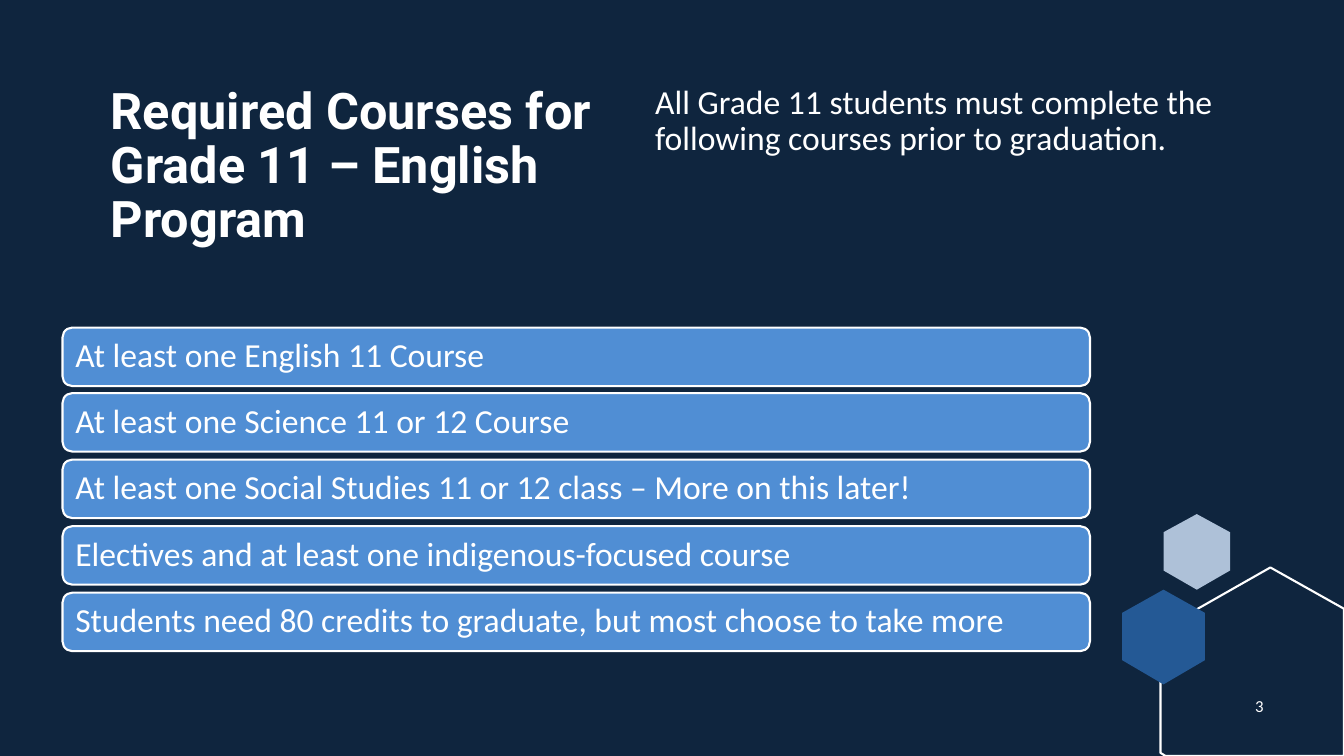
from dataclasses import dataclass

from pptx import Presentation
from pptx.dml.color import RGBColor
from pptx.enum.shapes import MSO_SHAPE
from pptx.enum.text import MSO_ANCHOR, PP_ALIGN
from pptx.util import Emu, Pt

ROUNDED = MSO_SHAPE.ROUNDED_RECTANGLE
TOP, MIDDLE = MSO_ANCHOR.TOP, MSO_ANCHOR.MIDDLE
LEFT, CENTER = PP_ALIGN.LEFT, PP_ALIGN.CENTER
EMU_PER_PX = 9144
SLIDE_WIDTH, SLIDE_HEIGHT = 1333, 750

COURSES = [
    "At least one English 11 Course",
    "At least one Science 11 or 12 Course",
    "At least one Social Studies 11 or 12 class – More on this later!",
    "Electives and at least one indigenous-focused course",
    "Students need 80 credits to graduate, but most choose to take more",
]
FIRST_BAR_TOP, LAST_BAR_TOP = 325, 588


@dataclass(frozen=True)
class Theme:
    background: str = "0F253E"
    white: str = "FFFFFF"
    bar: str = "508ED4"
    pale_hexagon: str = "AEC1D8"
    deep_hexagon: str = "245995"
    heading_font: str = "Roboto"
    body_font: str = "Calibri"
    title_size: int = 36
    body_size: int = 24
    number_size: int = 12
    line_width: float = 1.5
    line_spacing: float = 0.9


def px(length):
    return Emu(length * EMU_PER_PX)


def write_text(frame, text, *, font, size, color, bold=False,
               align=LEFT, anchor=TOP, line_spacing=1.0):
    frame.word_wrap = True
    frame.vertical_anchor = anchor
    paragraph = frame.paragraphs[0]
    paragraph.alignment = align
    paragraph.line_spacing = line_spacing
    run = paragraph.add_run()
    run.text = text
    run.font.name = font
    run.font.size = Pt(size)
    run.font.bold = bold
    run.font.color.rgb = RGBColor.from_string(color)


class SlideBuilder:
    def __init__(self, presentation, theme):
        self.theme = theme
        self.slide = presentation.slides.add_slide(presentation.slide_layouts[6])
        fill = self.slide.background.fill
        fill.solid()
        fill.fore_color.rgb = RGBColor.from_string(theme.background)

    def paint(self, shape, fill=None, line=None):
        shape.shadow.inherit = False
        if fill:
            shape.fill.solid()
            shape.fill.fore_color.rgb = RGBColor.from_string(fill)
        else:
            shape.fill.background()
        if line:
            shape.line.color.rgb = RGBColor.from_string(line)
            shape.line.width = Pt(self.theme.line_width)
        else:
            shape.line.fill.background()

    def polygon(self, points, fill=None, line=None):
        builder = self.slide.shapes.build_freeform(*points[0], scale=EMU_PER_PX)
        builder.add_line_segments(points[1:], close=True)
        self.paint(builder.convert_to_shape(), fill, line)

    def hexagon(self, left, top, width, height, fill):
        center, right = left + width // 2, left + width
        upper, lower = top + height // 4, top + height * 3 // 4
        self.polygon([(center, top), (right, upper), (right, lower),
                      (center, top + height), (left, lower), (left, upper)], fill)

    def text(self, left, top, width, height, text, **text_format):
        box = self.slide.shapes.add_textbox(px(left), px(top), px(width), px(height))
        style = {"font": self.theme.body_font, "size": self.theme.body_size,
                 "color": self.theme.white, **text_format}
        write_text(box.text_frame, text, **style)

    def bar(self, left, top, width, height, text):
        theme = self.theme
        shape = self.slide.shapes.add_shape(ROUNDED, px(left), px(top), px(width), px(height))
        self.paint(shape, theme.bar, theme.white)
        write_text(shape.text_frame, text, font=theme.body_font, size=theme.body_size,
                   color=theme.white, anchor=MIDDLE, line_spacing=theme.line_spacing)


def main():
    presentation = Presentation()
    presentation.slide_width = px(SLIDE_WIDTH)
    presentation.slide_height = px(SLIDE_HEIGHT)
    theme = Theme()
    builder = SlideBuilder(presentation, theme)

    builder.hexagon(1154, 510, 66, 75, theme.pale_hexagon)
    builder.polygon([(1260, 563), (1333, 604), (1333, 750), (1156, 750),
                     (1151, 747), (1151, 625)], line=theme.white)
    builder.hexagon(1113, 585, 82, 94, theme.deep_hexagon)

    builder.text(100, 80, 510, 190, "Required Courses for Grade 11 – English Program",
                 font=theme.heading_font, size=theme.title_size, bold=True,
                 line_spacing=theme.line_spacing)
    builder.text(640, 80, 600, 190,
                 "All Grade 11 students must complete the following courses prior to graduation.",
                 line_spacing=theme.line_spacing)
    builder.text(1224, 680, 50, 40, "3", size=theme.number_size,
                 align=CENTER, anchor=MIDDLE)

    bar_span = LAST_BAR_TOP - FIRST_BAR_TOP
    for row, course in enumerate(COURSES):
        top = FIRST_BAR_TOP + row * bar_span // (len(COURSES) - 1)
        builder.bar(62, top, 1019, 58, course)

    presentation.save("out.pptx")


if __name__ == "__main__":
    main()
